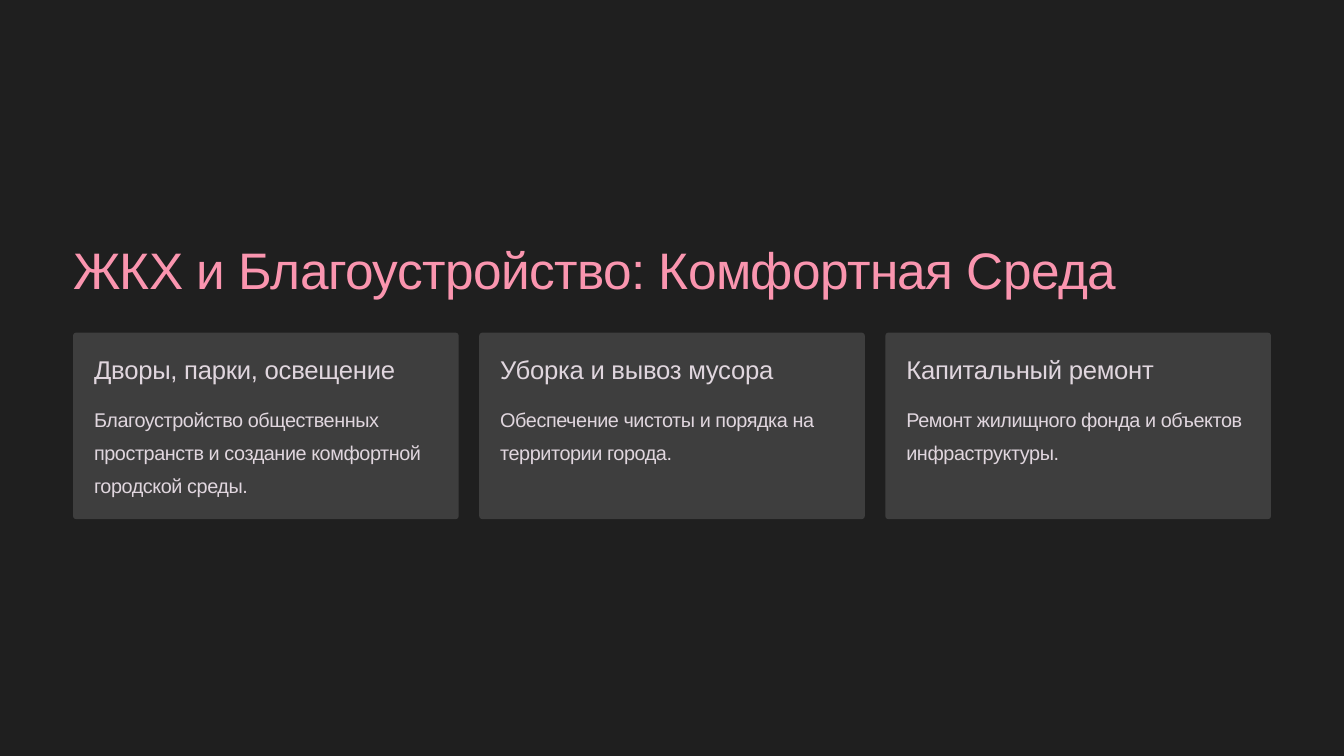
from pptx import Presentation
from pptx.dml.color import RGBColor
from pptx.enum import shapes, text
from pptx.util import Inches, Pt

BACKGROUND, CARD, PINK, LIGHT = "1F1F1F", "3E3E3E", "FA95AF", "E0D6DE"
TITLE = "ЖКХ и Благоустройство: Комфортная Среда"
CARDS = [
    ("Дворы, парки, освещение", 3.69,
     "Благоустройство общественных пространств и создание комфортной городской среды.", 1.14),
    ("Уборка и вывоз мусора", 3.34,
     "Обеспечение чистоты и порядка на территории города.", 0.75),
    ("Капитальный ремонт", 3,
     "Ремонт жилищного фонда и объектов инфраструктуры.", 0.75),
]
TITLE_STYLE = {"size": 44, "leading": 55, "spacing": -50, "color": PINK, "wrap": False}
HEADING_STYLE = {"size": 22, "leading": 27, "spacing": -20, "color": LIGHT, "wrap": False}
BODY_STYLE = {"size": 17, "leading": 28, "spacing": -40, "color": LIGHT, "wrap": True}

SLIDE_WIDTH, SLIDE_HEIGHT = 16, 9
MARGIN, GAP, PADDING = 0.87, 0.245, 0.25
CARD_TOP, CARD_HEIGHT, CORNER = 3.96, 2.22, 0.017
CARD_WIDTH = (SLIDE_WIDTH - 2 * MARGIN - GAP * (len(CARDS) - 1)) / len(CARDS)


def paint(fill, color):
    fill.solid()
    fill.fore_color.rgb = RGBColor.from_string(color)


def add_text(slide, box, content, size, leading, spacing, color, wrap):
    frame = slide.shapes.add_textbox(*map(Inches, box)).text_frame
    frame.margin_left = frame.margin_top = frame.margin_right = frame.margin_bottom = 0
    frame.word_wrap = wrap
    frame.auto_size = text.MSO_AUTO_SIZE.SHAPE_TO_FIT_TEXT
    frame.text = content
    paragraph = frame.paragraphs[0]
    paragraph.line_spacing = Pt(leading)
    run = paragraph.runs[0]
    run.font.name = "Arial"
    run.font.size = Pt(size)
    paint(run.font.fill, color)
    run.font._element.set("spc", str(spacing))


def add_card(slide, left, heading, heading_width, body, body_height):
    box = (left, CARD_TOP, CARD_WIDTH, CARD_HEIGHT)
    card = slide.shapes.add_shape(shapes.MSO_SHAPE.ROUNDED_RECTANGLE, *map(Inches, box))
    card.adjustments[0] = CORNER
    card.shadow.inherit = False
    card.line.fill.background()
    paint(card.fill, CARD)
    text_left = left + PADDING
    add_text(slide, (text_left, CARD_TOP + PADDING, heading_width, 0.37), heading, **HEADING_STYLE)
    add_text(slide, (text_left, 4.75, CARD_WIDTH - 2 * PADDING, body_height), body, **BODY_STYLE)


def main():
    """Build the slide on housing services and urban improvement."""
    presentation = Presentation()
    presentation.slide_width = Inches(SLIDE_WIDTH)
    presentation.slide_height = Inches(SLIDE_HEIGHT)
    slide = presentation.slides.add_slide(presentation.slide_layouts[6])
    paint(slide.background.fill, BACKGROUND)
    add_text(slide, (MARGIN, 2.81, 12.81, 0.74), TITLE, **TITLE_STYLE)
    for index, card in enumerate(CARDS):
        add_card(slide, MARGIN + index * (CARD_WIDTH + GAP), *card)
    presentation.save("out.pptx")


if __name__ == "__main__":
    main()
